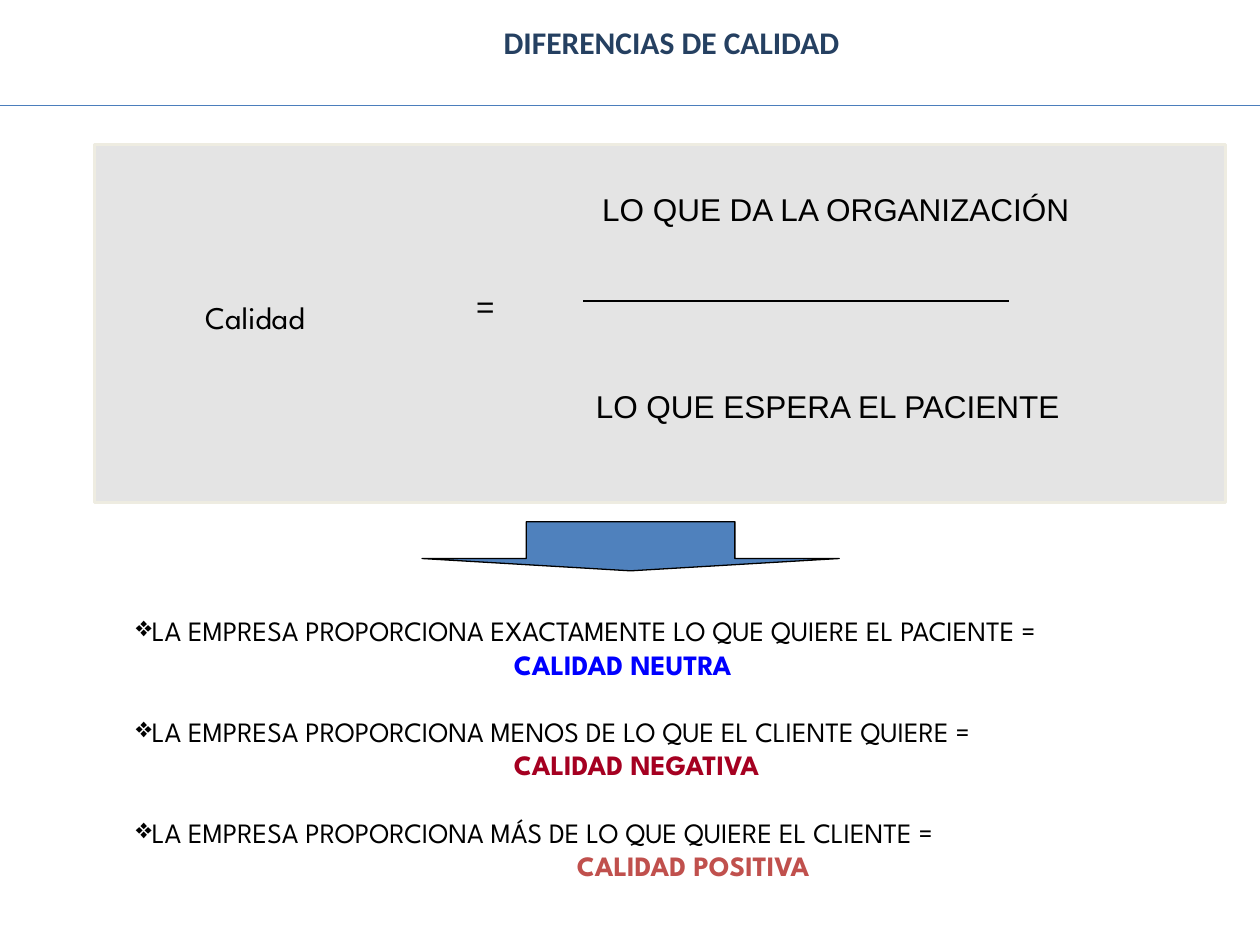
from lxml import etree
from pptx import Presentation
from pptx.dml.color import RGBColor
from pptx.enum.shapes import MSO_CONNECTOR, MSO_SHAPE
from pptx.enum.text import PP_ALIGN
from pptx.oxml.ns import qn
from pptx.util import Inches, Pt

RECTANGLE = MSO_SHAPE.RECTANGLE
DOWN_ARROW = MSO_SHAPE.DOWN_ARROW
STRAIGHT = MSO_CONNECTOR.STRAIGHT
LEFT, CENTER = PP_ALIGN.LEFT, PP_ALIGN.CENTER

BLACK = RGBColor(0x00, 0x00, 0x00)
NAVY = RGBColor(0x25, 0x40, 0x61)
STEEL = RGBColor(0x4F, 0x81, 0xBD)
RULE_BLUE = RGBColor(0x4B, 0x7E, 0xBC)
GREY = RGBColor(0xDD, 0xDD, 0xDD)
CREAM = RGBColor(0xEE, 0xEC, 0xE1)
BLUE = RGBColor(0x00, 0x00, 0xFF)
CRIMSON = RGBColor(0xA5, 0x00, 0x21)
CORAL = RGBColor(0xC0, 0x50, 0x4D)

SPARTAN = "League Spartan"
WIDTH, HEIGHT = Inches(10), Inches(7.5)

prs = Presentation()
prs.slide_width, prs.slide_height = WIDTH, HEIGHT
slide = prs.slides.add_slide(prs.slide_layouts[6])
shapes = slide.shapes


def text_frame(left, top, width, height):
    frame = shapes.add_textbox(*map(Inches, (left, top, width, height))).text_frame
    frame.word_wrap = True
    return frame


def write(paragraph, text, **font_format):
    run = paragraph.add_run()
    run.text = text
    color = font_format.pop("color", BLACK)
    for attribute, value in font_format.items():
        setattr(run.font, attribute, value)
    run.font.color.rgb = color


blocks = [
    (RECTANGLE, (0.75, 1.15, 8.98, 2.84), GREY, CREAM, 1.75),
    (DOWN_ARROW, (3.35, 4.14, 3.31, 0.39), STEEL, BLACK, 0.75),
]
for kind, place, fill, outline, weight in blocks:
    block = shapes.add_shape(kind, *map(Inches, place))
    block.shadow.inherit = False
    block.fill.solid()
    block.fill.fore_color.rgb = fill
    block.line.color.rgb = outline
    block.line.width = Pt(weight)
    if kind == RECTANGLE:
        tint = block.fill._xPr.find(".//" + qn("a:srgbClr"))
        etree.SubElement(tint, qn("a:alpha"), val="77000")
    else:
        block.adjustments[0], block.adjustments[1] = 0.5, 0.25

rules = [(0, 10, 0.84, RULE_BLUE), (4.63, 8.01, 2.39, BLACK)]
for start, end, level, color in rules:
    rule = shapes.add_connector(STRAIGHT, *map(Inches, (start, level, end, level)))
    rule.line.color.rgb = color
    rule.line.width = Pt(0.75)
    etree.SubElement(rule._element.spPr, qn("a:effectLst"))

labels = [
    ("DIFERENCIAS DE CALIDAD", (2.87, 0.13, 4.92, 0.4), "Calibri", NAVY, True, CENTER),
    ("Calidad", (1.53, 2.32, 1.61, 0.5), SPARTAN, BLACK, False, LEFT),
    ("=", (3.68, 2.23, 0.35, 0.4), "Arial", BLACK, False, LEFT),
    ("LO QUE DA LA ORGANIZACIÓN", (4.68, 1.46, 3.95, 0.4), "Arial", BLACK, False, LEFT),
    ("LO QUE ESPERA EL PACIENTE", (4.63, 3.02, 3.92, 0.4), "Arial", BLACK, False, LEFT),
]
for text, place, face, color, bold, alignment in labels:
    label = text_frame(*place).paragraphs[0]
    label.alignment = alignment
    write(label, text, name=face, size=Pt(18), bold=bold, color=color)

outcomes = [
    ("LA EMPRESA PROPORCIONA EXACTAMENTE LO QUE QUIERE EL PACIENTE =",
     "CALIDAD NEUTRA", BLUE, 3),
    ("LA EMPRESA PROPORCIONA MENOS DE LO QUE EL CLIENTE QUIERE =",
     "CALIDAD NEGATIVA", CRIMSON, 3),
    ("LA EMPRESA PROPORCIONA MÁS DE LO QUE QUIERE EL CLIENTE =",
     "CALIDAD POSITIVA", CORAL, 3.5),
]
outcome_frame = text_frame(0.98, 4.82, 8.43, 2.26)
for index, (condition, verdict, color, indent) in enumerate(outcomes):
    if index:
        premise = outcome_frame.add_paragraph()
        premise.space_before = Pt(19.3)
    else:
        premise = outcome_frame.paragraphs[0]
    etree.SubElement(premise._p.get_or_add_pPr(), qn("a:buChar"), char="❖")
    write(premise, condition, name=SPARTAN, size=Pt(16), bold=False)
    result = outcome_frame.add_paragraph()
    result._p.get_or_add_pPr().set("marL", str(Inches(indent)))
    write(result, verdict, name=SPARTAN, size=Pt(16), bold=True, color=color)

prs.save("out.pptx")
